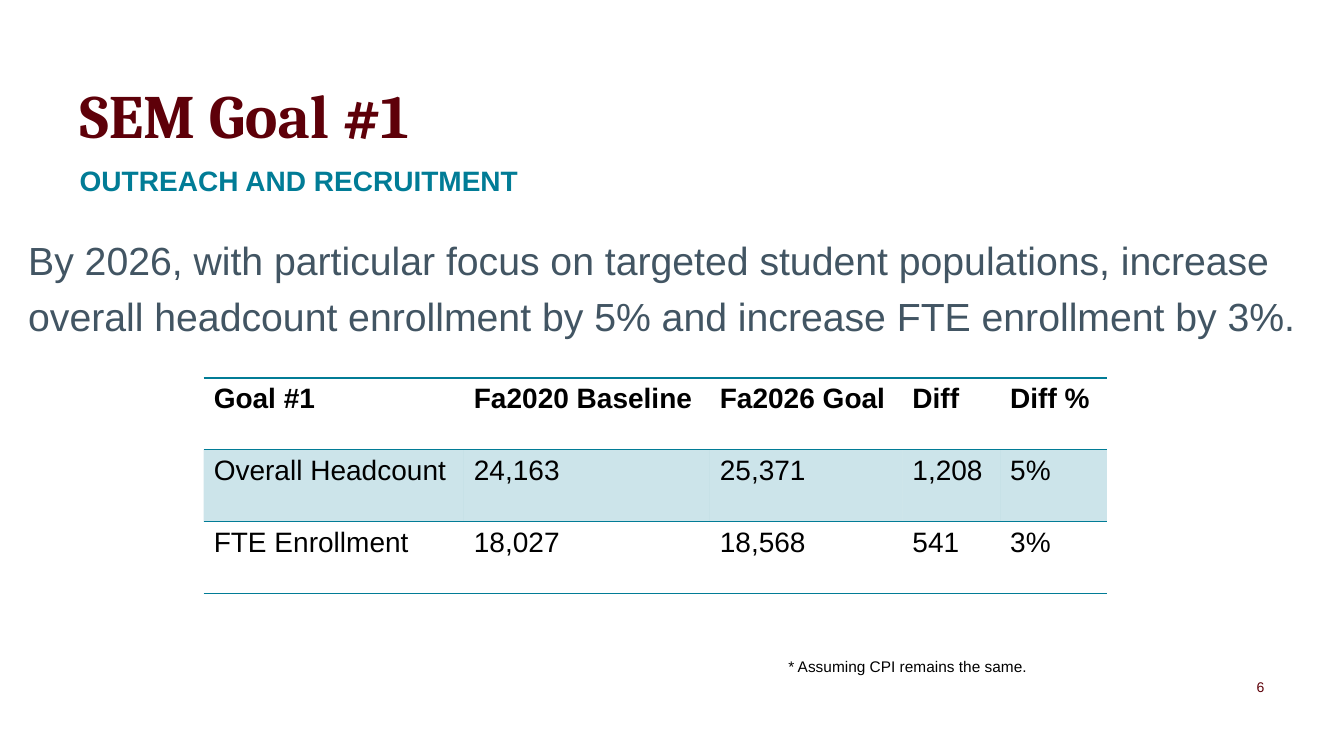
from dataclasses import dataclass

from lxml.etree import SubElement
from pptx import Presentation
from pptx.dml.color import RGBColor as Rgb
from pptx.enum.text import MSO_ANCHOR as Anchor, PP_ALIGN as Align
from pptx.oxml import parse_xml
from pptx.oxml.ns import nsdecls, qn
from pptx.util import Inches, Pt

MAROON, TEAL, SLATE, BLACK = "5E0009", "017C96", "425563", "000000"
PLAIN = "{2D5ABB26-0587-4C30-8999-92F81FD0307C}"
WIDTHS = [2.58, 2.44, 1.91, 0.97, 1.06]
HIGH = 2.14 / 3
ROWS = [
    ["Goal #1", "Fa2020 Baseline", "Fa2026 Goal", "Diff", "Diff %"],
    ["Overall Headcount", "24,163", "25,371", "1,208", "5%"],
    ["FTE Enrollment", "18,027", "18,568", "541", "3%"],
]
EDGES = {0: ["lnT", "lnB"], 1: ["lnT"], 2: ["lnB"]}


@dataclass
class Label:
    text: str
    left: float
    top: float
    width: float
    height: float
    size: float
    color: str
    font: str = "Arial"
    bold: bool = False
    align: Align = Align.LEFT
    anchor: Anchor = Anchor.TOP
    lines: float = 1.0
    inset: tuple[float, float] = (0, 0)


LABELS = [
    Label("6", 11.79, 6.63, 0.75, 0.37, 10, MAROON,
          align=Align.RIGHT, anchor=Anchor.MIDDLE),
    Label("By 2026, with particular focus on targeted student populations, "
          "increase overall headcount enrollment by 5% and increase FTE "
          "enrollment by 3%.", 0.28, 2.25, 12.77, 1.3, 28, SLATE, lines=1.2),
    Label("OUTREACH AND RECRUITMENT", 0.79, 1.62, 11.75, 0.37, 20, TEAL,
          bold=True),
    Label("SEM Goal #1", 0.79, 0.75, 11.75, 0.75, 44, MAROON, "Cambria", True,
          anchor=Anchor.BOTTOM),
    Label("* Assuming CPI remains the same.", 7.72, 6.47, 3.26, 0.29, 11,
          BLACK, inset=(0.1, 0.05)),
]


def paint(code: str) -> Rgb:
    return Rgb.from_string(code)


def style(para, size: float, color: str, font: str, bold: bool) -> None:
    for run in para.runs:
        run.font.size = Pt(size)
        run.font.name = font
        run.font.bold = bold
        run.font.color.rgb = paint(color)


def write(slide, label: Label) -> None:
    box = slide.shapes.add_textbox(
        *map(Inches, (label.left, label.top, label.width, label.height)))
    frame = box.text_frame
    frame.word_wrap = True
    frame.vertical_anchor = label.anchor
    frame.margin_left = frame.margin_right = Inches(label.inset[0])
    frame.margin_top = frame.margin_bottom = Inches(label.inset[1])
    frame.text = label.text
    para = frame.paragraphs[0]
    para.alignment = label.align
    para.line_spacing = label.lines
    style(para, label.size, label.color, label.font, label.bold)


def tint(cell) -> None:
    cell.fill.solid()
    cell.fill.fore_color.rgb = paint(TEAL)
    tone = next(cell._tc.get_or_add_tcPr().iter(qn("a:srgbClr")))
    SubElement(tone, qn("a:alpha")).set("val", "20000")


def rule(cell, edges: list[str]) -> None:
    props = cell._tc.get_or_add_tcPr()
    for spot, edge in enumerate(edges):
        props.insert(spot, parse_xml(
            f'<a:{edge} {nsdecls("a")} w="{Pt(1)}"><a:solidFill>'
            f'<a:srgbClr val="{TEAL}"/></a:solidFill></a:{edge}>'))


def tabulate(slide) -> None:
    frame = slide.shapes.add_table(
        len(ROWS), len(WIDTHS), Inches(2.02), Inches(3.75),
        Inches(sum(WIDTHS)), Inches(HIGH * len(ROWS)))
    table = frame.table
    next(frame._element.iter(qn("a:tableStyleId"))).text = PLAIN
    for col, width in zip(table.columns, WIDTHS):
        col.width = Inches(width)
    for down, row in enumerate(ROWS):
        table.rows[down].height = Inches(HIGH)
        for over, text in enumerate(row):
            cell = table.cell(down, over)
            cell.text_frame.text = text
            style(cell.text_frame.paragraphs[0], 20, BLACK, "Arial", down == 0)
            if down == 1:
                tint(cell)
            else:
                cell.fill.background()
            rule(cell, EDGES[down])


def main() -> None:
    deck = Presentation()
    deck.slide_width = Inches(13.33)
    deck.slide_height = Inches(7.5)
    slide = deck.slides.add_slide(deck.slide_layouts[6])
    for label in LABELS:
        write(slide, label)
    tabulate(slide)
    deck.save("out.pptx")


if __name__ == "__main__":
    main()
